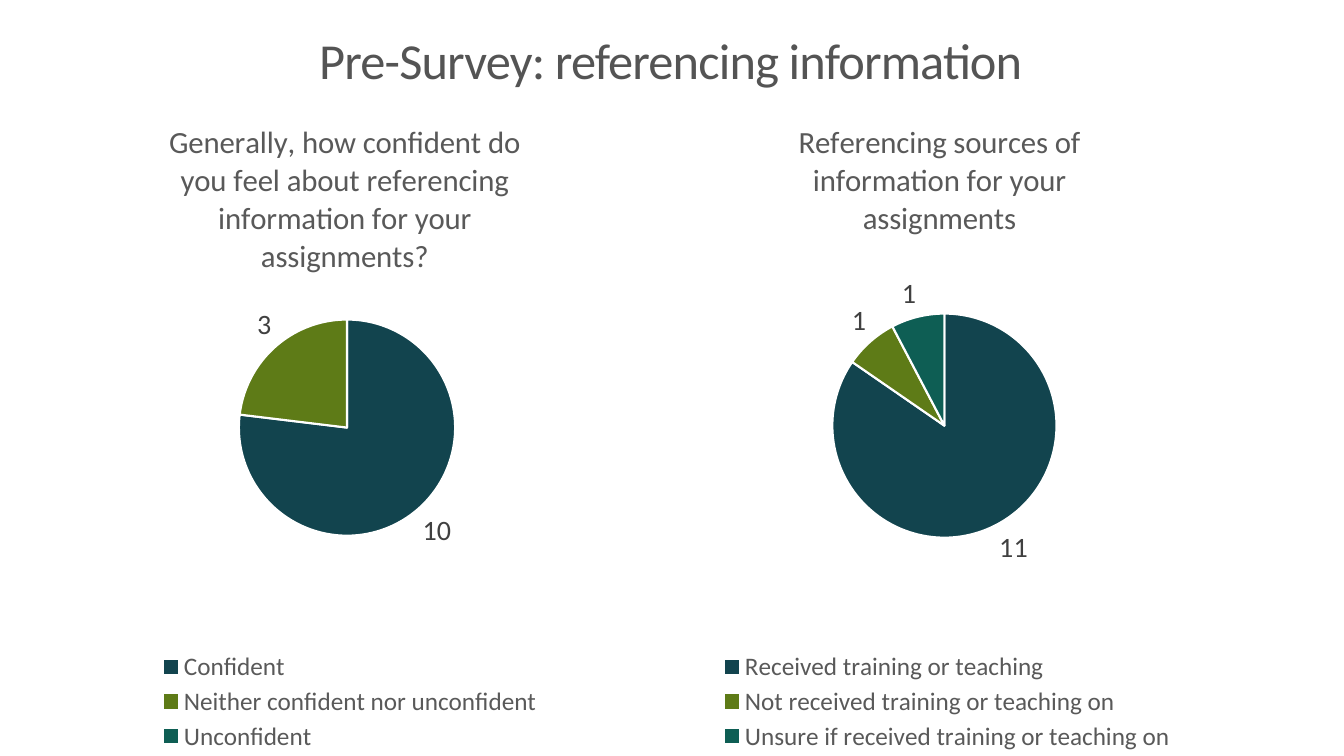
from dataclasses import dataclass

from lxml import etree
from pptx import Presentation
from pptx.chart.data import CategoryChartData
from pptx.dml.color import RGBColor
from pptx.enum.chart import XL_CHART_TYPE, XL_LABEL_POSITION, XL_LEGEND_POSITION
from pptx.enum.text import MSO_ANCHOR, PP_ALIGN
from pptx.oxml.ns import qn
from pptx.util import Inches, Pt

PIE = XL_CHART_TYPE.PIE
OUTER = XL_LABEL_POSITION.OUTSIDE_END
BOTTOM = XL_LEGEND_POSITION.BOTTOM
MIDDLE = MSO_ANCHOR.MIDDLE
CENTER = PP_ALIGN.CENTER

WHITE = RGBColor(0xFF, 0xFF, 0xFF)
HEAD = RGBColor(0x54, 0x54, 0x54)
GREY = RGBColor(0x59, 0x59, 0x59)
DARK = RGBColor(0x40, 0x40, 0x40)
SLICES = (
    RGBColor(0x12, 0x44, 0x4E),
    RGBColor(0x5E, 0x7B, 0x17),
    RGBColor(0x0E, 0x5E, 0x54),
)
FACE = "Calibri"
WIDE, HIGH = Inches(13.33), Inches(7.5)
TOP = 0.128  # share of the slide's height above both charts

Box = tuple[float, float, float, float]


@dataclass
class Survey:
    """One question; left and width are shares of the slide, boxes of the chart."""
    ask: str
    votes: dict[str, int]
    left: float
    width: float
    plot: Box
    key: Box


SURVEYS = (
    Survey(
        "Generally, how confident do you feel about referencing information "
        "for your assignments?",
        {"Confident": 10, "Neither confident nor unconfident": 3, "Unconfident": 0},
        0.064, 0.385, (0.295, 0.338, 0.419, 0.328), (0.13, 0.835, 0.76, 0.165),
    ),
    Survey(
        "Referencing sources of information for your assignments",
        {
            "Received training or teaching": 11,
            "Not received training or teaching on": 1,
            "Unsure if received training or teaching on": 1,
        },
        0.512, 0.374, (0.287, 0.329, 0.446, 0.34), (0.05, 0.835, 0.93, 0.165),
    ),
)


def style(font, size: int, color: RGBColor) -> None:
    font.name, font.size, font.bold = FACE, Pt(size), False
    font.color.rgb = color


def place(parent, box: Box, inner: bool = False) -> None:
    """Give a plot area or legend a fixed place within its chart."""
    for old in parent.findall(qn("c:layout")):
        parent.remove(old)
    layout = etree.Element(qn("c:layout"))
    manual = etree.SubElement(layout, qn("c:manualLayout"))
    parts = [("xMode", "edge"), ("yMode", "edge"), *zip("xywh", box)]
    if inner:
        parts.insert(0, ("layoutTarget", "inner"))
    for name, value in parts:
        etree.SubElement(manual, qn(f"c:{name}")).set("val", str(value))
    spot = parent.find(qn("c:legendPos"))
    if spot is None:
        parent.insert(0, layout)
    else:
        spot.addnext(layout)


def add_title(slide, text: str) -> None:
    box = slide.shapes.add_textbox(
        int(WIDE * 0.074), 0, int(WIDE * 0.85), int(HIGH / 6))
    frame = box.text_frame
    frame.word_wrap = True
    frame.vertical_anchor = MIDDLE
    frame.text = text
    line = frame.paragraphs[0]
    line.alignment, line.line_spacing = CENTER, 0.9
    run = line.runs[0]
    style(run.font, 36, HEAD)
    run.font._element.set("spc", "-60")


def add_pie(slide, survey: Survey) -> None:
    data = CategoryChartData()
    data.categories = list(survey.votes)
    data.add_series(survey.ask, list(survey.votes.values()))
    chart = slide.shapes.add_chart(
        PIE, int(WIDE * survey.left), int(HIGH * TOP),
        int(WIDE * survey.width), int(HIGH * (1 - TOP)), data).chart
    style(chart.font, 10, DARK)

    # Question
    chart.has_title = True
    frame = chart.chart_title.text_frame
    frame.text = survey.ask
    style(frame.paragraphs[0].runs[0].font, 22, GREY)
    chart.chart_title.include_in_layout = False

    # Slices and their counts
    plot = chart.plots[0]
    plot.vary_by_categories = True
    pie = plot.series[0]
    for i, color in enumerate(SLICES):
        shape = pie.points[i].format
        shape.fill.solid()
        shape.fill.fore_color.rgb = color
        shape.line.color.rgb = WHITE
        shape.line.width = Pt(1.5)
    labels = pie.data_labels
    labels.show_value = True
    labels.position = OUTER
    # An empty slice shows no count
    labels.number_format = "0;;"
    labels.number_format_is_linked = False
    style(labels.font, 20, DARK)
    place(chart._chartSpace.chart.plotArea, survey.plot, inner=True)

    # Legend
    chart.has_legend = True
    chart.legend.position = BOTTOM
    chart.legend.include_in_layout = False
    style(chart.legend.font, 18, GREY)
    place(chart.legend._element, survey.key)


def main() -> None:
    deck = Presentation()
    deck.slide_width, deck.slide_height = WIDE, HIGH
    slide = deck.slides.add_slide(deck.slide_layouts[6])
    add_title(slide, "Pre-Survey: referencing information")
    for survey in SURVEYS:
        add_pie(slide, survey)
    deck.save("out.pptx")


if __name__ == "__main__":
    main()
